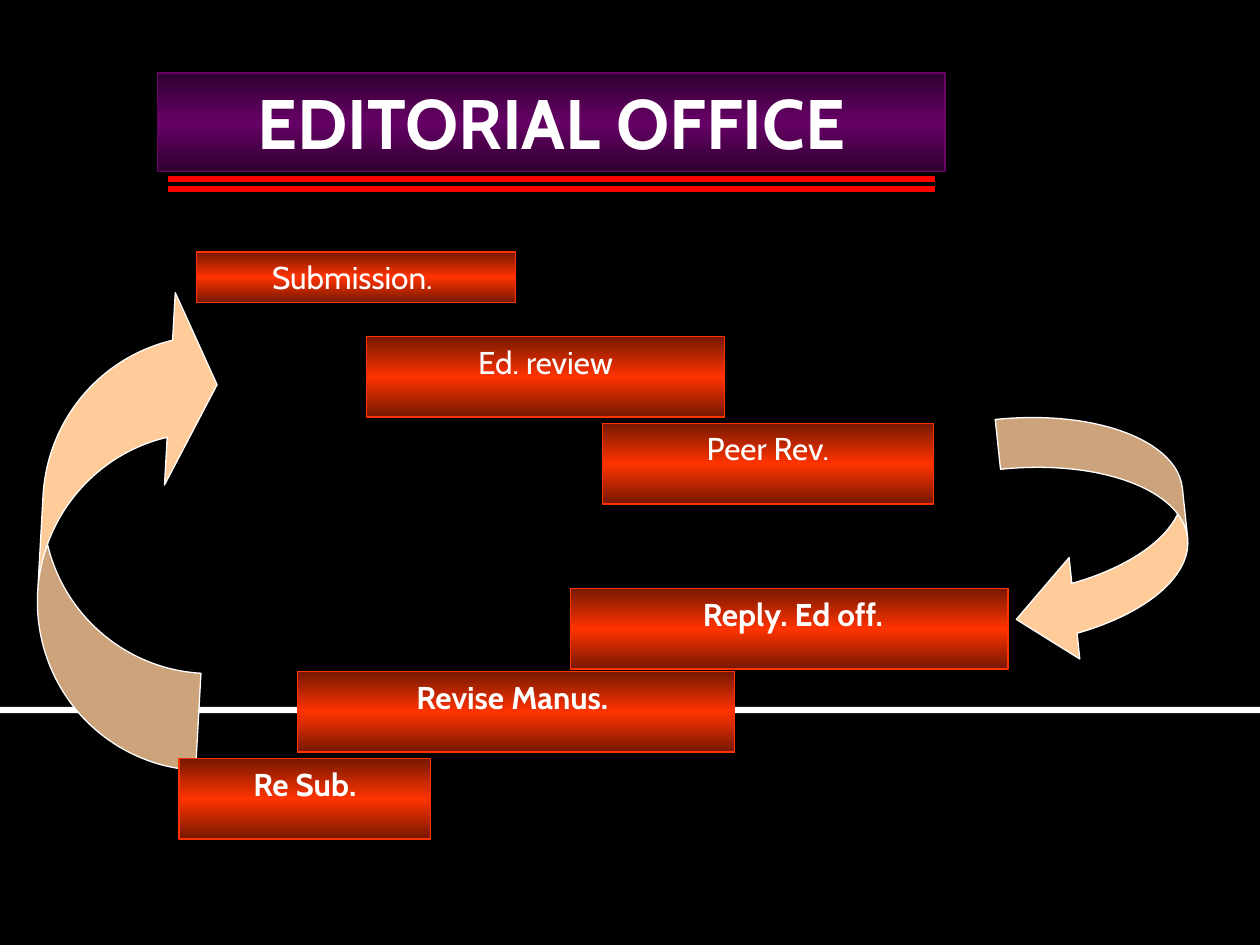
import copy

import pptx
import pptx.dml.color
import pptx.enum.shapes
import pptx.enum.text
import pptx.oxml.ns
import pptx.util

Inches = pptx.util.Inches
Pt = pptx.util.Pt
SHAPES = pptx.enum.shapes.MSO_SHAPE

COLORS = {
    "background": "000000",
    "text": "FFFFFF",
    "title": "660066",
    "title_edge": "2F002F",
    "step": "FF3300",
    "step_edge": "761800",
    "arrow": "FFCC99",
    "underline": "FF0000",
}

STEPS = [
    ("Submission. ", (1.56, 2, 2.53, 0.4), False),
    (" Peer Rev. ", (4.78, 3.36, 2.63, 0.64), False),
    (" Reply. Ed off.", (4.53, 4.67, 3.47, 0.64), True),
    ("Ed. review", (2.91, 2.67, 2.84, 0.64), False),
    ("Revise Manus. ", (2.36, 5.33, 3.47, 0.64), True),
    ("Re Sub.", (1.42, 6.02, 2, 0.64), True),
]


def color(name):
    return pptx.dml.color.RGBColor.from_string(COLORS[name])


def set_all(target, values):
    for name, value in values.items():
        setattr(target, name, value)


def place(shape, box):
    names = ("left", "top", "width", "height")
    set_all(shape, dict(zip(names, map(Inches, box))))


def add_shape(page, kind, box):
    shape = page.shapes.add_shape(kind, *map(Inches, box))
    shape.shadow.inherit = False
    return shape


def outline(shape, name):
    shape.line.color.rgb = color(name)
    shape.line.width = Pt(0.75)


def fill_band(shape, name):
    shape.fill.gradient()
    shape.fill.gradient_angle = 90
    stops = shape._element.spPr.find(".//" + pptx.oxml.ns.qn("a:gsLst"))
    stops.insert(1, copy.deepcopy(stops[0]))
    edge = name + "_edge"
    for stop, position, tone in zip(
        shape.fill.gradient_stops, (0, 0.5, 1), (edge, name, edge)
    ):
        stop.position = position
        stop.color.rgb = color(tone)
    outline(shape, name)


def write(shape, text, size, bold):
    frame = shape.text_frame
    set_all(frame, {
        "word_wrap": True,
        "auto_size": pptx.enum.text.MSO_AUTO_SIZE.NONE,
        "vertical_anchor": pptx.enum.text.MSO_ANCHOR.TOP,
    })
    para = frame.paragraphs[0]
    para.alignment = pptx.enum.text.PP_ALIGN.CENTER
    span = para.add_run()
    span.text = text
    set_all(span.font, {"name": "Cabin", "size": Pt(size), "bold": bold})
    span.font.color.rgb = color("text")


def build_title(page, box):
    title = page.shapes.title
    place(title, box)
    fill_band(title, "title")
    write(title, "EDITORIAL OFFICE", 40, True)


def build_underlines(page, box):
    left, top, width, height = box
    for y in (top, top + height):
        line = page.shapes.add_connector(
            pptx.enum.shapes.MSO_CONNECTOR.STRAIGHT,
            *map(Inches, (left, y, left + width, y)),
        )
        line.line.color.rgb = color("underline")
        line.line.width = Pt(3)
        line._element.spPr.add_effect = None
        line._element.spPr.append(pptx.oxml.parse_xml(
            "<a:effectLst %s/>" % pptx.oxml.ns.nsdecls("a")))


def build_rule(page, box):
    rule = add_shape(page, SHAPES.RECTANGLE, box)
    rule.fill.solid()
    rule.fill.fore_color.rgb = color("text")
    rule.line.fill.background()


def build_arrow(page, kind, box, rotation, adjustments, flipped=False):
    arrow = add_shape(page, kind, box)
    arrow.rotation = rotation
    for index, value in enumerate(adjustments):
        arrow.adjustments[index] = value
    if flipped:
        arrow._element.spPr.xfrm.set("flipV", "1")
    arrow.fill.solid()
    arrow.fill.fore_color.rgb = color("arrow")
    outline(arrow, "text")


def build_step(page, text, box, bold):
    step = add_shape(page, SHAPES.RECTANGLE, box)
    fill_band(step, "step")
    write(step, text, 18, bold)


def main():
    deck = pptx.Presentation()
    set_all(deck, {"slide_width": Inches(10), "slide_height": Inches(7.5)})
    page = deck.slides.add_slide(deck.slide_layouts[5])
    page.background.fill.solid()
    page.background.fill.fore_color.rgb = color("background")

    build_rule(page, (0, 5.61, 10, 0.05))
    build_title(page, (1.25, 0.58, 6.25, 0.78))
    build_arrow(page, SHAPES.CURVED_RIGHT_ARROW, (0.33, 2.25, 1.33, 3.83),
                3.2, (0.58, 1.15, 0.28), flipped=True)
    build_arrow(page, SHAPES.CURVED_LEFT_ARROW, (8, 3.25, 1.42, 2),
                354, (0.28, 0.57, 0.33))
    for text, box, bold in STEPS:
        build_step(page, text, box, bold)
    build_underlines(page, (1.33, 1.42, 6.09, 0.08))
    deck.save("out.pptx")


if __name__ == "__main__":
    main()
